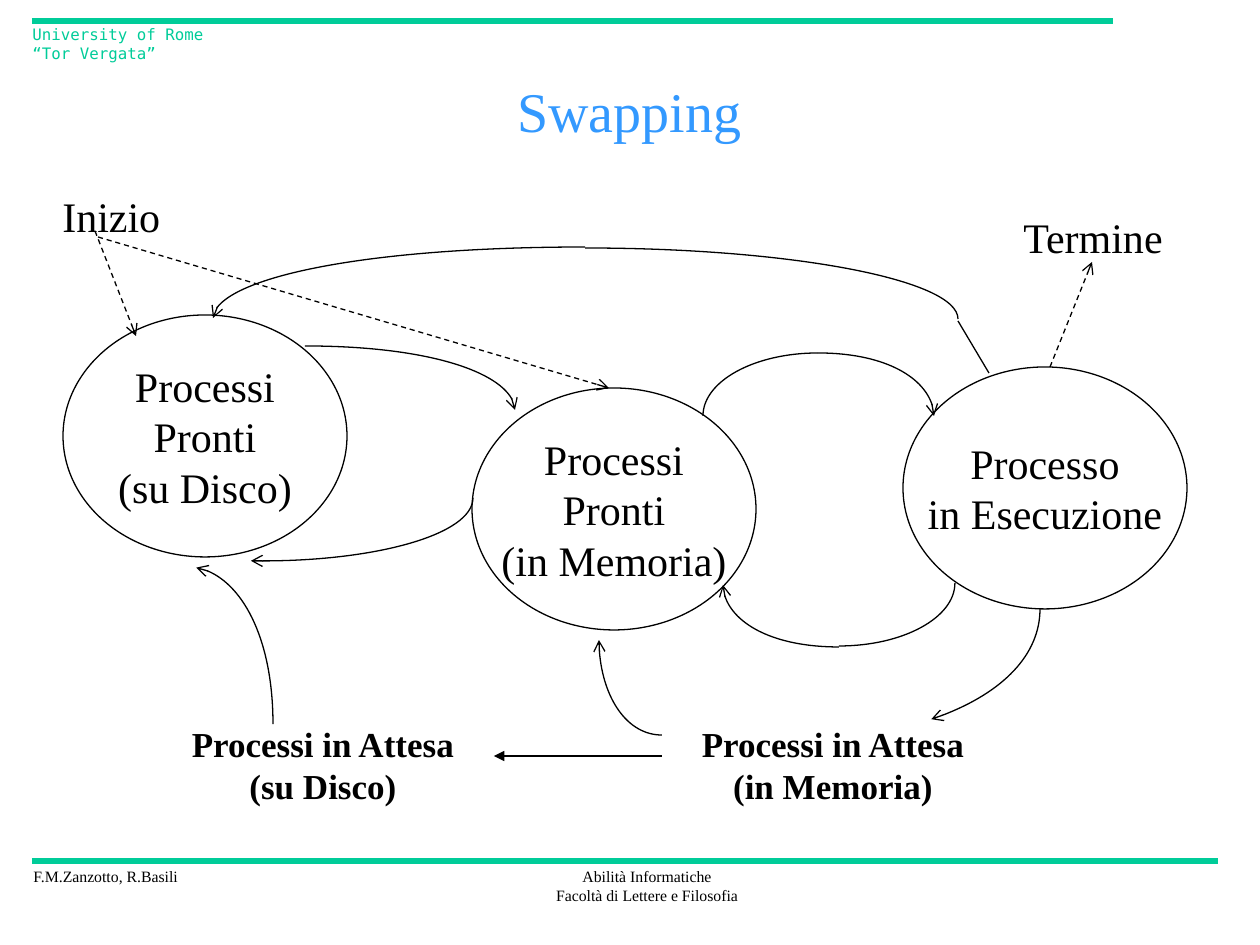
from math import cos, radians, sin, tan

from lxml import etree
from pptx import Presentation
from pptx.dml.color import RGBColor
from pptx.enum.dml import MSO_LINE
from pptx.enum.shapes import MSO_CONNECTOR, MSO_SHAPE
from pptx.enum.text import MSO_ANCHOR, MSO_AUTO_SIZE, PP_ALIGN
from pptx.oxml.ns import qn
from pptx.util import Emu, Pt

PX = 914400 / 126
BLACK = RGBColor(0x00, 0x00, 0x00)
GREEN = RGBColor(0x00, 0xCC, 0x99)
BLUE = RGBColor(0x33, 0x99, 0xFF)
SERIF = "Times New Roman"
MONO = "DejaVu Sans Mono"
LEFT, CENTER = PP_ALIGN.LEFT, PP_ALIGN.CENTER
MIDDLE = MSO_ANCHOR.MIDDLE
GROW = MSO_AUTO_SIZE.SHAPE_TO_FIT_TEXT
DASH = MSO_LINE.DASH
STRAIGHT = MSO_CONNECTOR.STRAIGHT
OVAL = MSO_SHAPE.OVAL


def emu(px):
    return Emu(round(px * PX))


def write(frame, text, size=24, color=BLACK, font=SERIF, bold=False,
          align=CENTER, anchor=None, wrap=False):
    frame.word_wrap = wrap
    if anchor is not None:
        frame.vertical_anchor = anchor
    frame.text = text
    for paragraph in frame.paragraphs:
        paragraph.alignment = align
        paragraph.font.size = Pt(size)
        paragraph.font.name = font
        paragraph.font.bold = bold
        paragraph.font.color.rgb = color


def arc_points(level, upright, first_angle):
    x, y = level
    width, height = upright[0] - x, upright[1] - y
    first = radians(first_angle)
    last = radians(90)
    reach = 4 / 3 * tan((last - first) / 4)

    def point(angle, pull):
        across = sin(angle) + pull * cos(angle)
        down = 1 - cos(angle) + pull * sin(angle)
        return emu(x + width * across), emu(y + height * down)

    return [point(first, 0), point(first, reach), point(last, -reach), point(last, 0)]


class Diagram:
    def __init__(self, slide, color=BLACK, width=0.75):
        self.shapes = slide.shapes
        self.color = color
        self.width = width

    def outline(self, shape, color=None, width=None, dash=None,
                end="tailEnd", arrow=None):
        shape.line.color.rgb = color or self.color
        shape.line.width = Pt(width or self.width)
        if dash is not None:
            shape.line.dash_style = dash
        if arrow:
            etree.SubElement(shape.get_or_add_ln(), qn(f"a:{end}"), type=arrow)

    def text(self, box, text, grow=True, **style):
        label = self.shapes.add_textbox(*map(emu, box))
        write(label.text_frame, text, **style)
        if grow:
            label.text_frame.auto_size = GROW

    def state(self, left, top, text):
        oval = self.shapes.add_shape(OVAL, *map(emu, (left, top, 284, 242)))
        oval.shadow.inherit = False
        oval.fill.background()
        self.outline(oval)
        write(oval.text_frame, text, anchor=MIDDLE)

    def line(self, start, end, **style):
        connector = self.shapes.add_connector(STRAIGHT, *map(emu, start + end))
        self.outline(connector, **style)
        etree.SubElement(connector._element.spPr, qn("a:effectLst"))

    def arc(self, level, upright, first_angle=0, **style):
        start, *controls = arc_points(level, upright, first_angle)
        builder = self.shapes.build_freeform(*start)
        builder.add_line_segments(controls, close=False)
        curve = builder.convert_to_shape()
        outline = next(curve._element.iter(qn("a:path")))
        bezier = etree.SubElement(outline, qn("a:cubicBezTo"))
        for segment in outline.findall(qn("a:lnTo")):
            bezier.append(segment[0])
            outline.remove(segment)
        curve.shadow.inherit = False
        curve.fill.background()
        self.outline(curve, **style)


def main():
    deck = Presentation()
    deck.slide_width, deck.slide_height = emu(1260), emu(945)
    diagram = Diagram(deck.slides.add_slide(deck.slide_layouts[6]))

    for y, right in ((861, 1218), (21, 1113)):
        diagram.line((32, y), (right, y), color=GREEN, width=3)
    diagram.text((21, 861, 171, 32), "F.M.Zanzotto, R.Basili", size=9, align=LEFT)
    diagram.text((543, 861, 208, 50),
                 "Abilità Informatiche\nFacoltà di Lettere e Filosofia", size=9)
    diagram.text((20, 19, 215, 50), "University of Rome “Tor Vergata”",
                 size=9, color=GREEN, font=MONO, align=LEFT, wrap=True)
    diagram.text((94, 63, 1071, 95), "Swapping", grow=False, size=32,
                 color=BLUE, anchor=MIDDLE, wrap=True)

    diagram.state(472, 388, "Processi\nPronti\n(in Memoria)")
    diagram.state(903, 367, "Processo\nin Esecuzione")
    diagram.state(63, 315, "Processi\nPronti\n(su Disco)")

    diagram.arc((305, 346), (515, 410), arrow="arrow")
    diagram.arc((829, 735), (1040, 609), 29, arrow="arrow", end="headEnd")
    diagram.arc((262, 561), (473, 498), -3, arrow="arrow", end="headEnd")

    for left, place in ((688, "in Memoria"), (178, "su Disco")):
        diagram.text((left, 716, 290, 97), f"Processi in Attesa\n({place})",
                     size=20, bold=True)

    diagram.arc((189, 567), (273, 724), 5, arrow="arrow", end="headEnd")
    diagram.line((662, 756), (494, 756), arrow="triangle")
    for level, upright, arrow in (
        ((662, 735), (599, 640), "arrow"),
        ((818, 353), (703, 416), None),
        ((818, 353), (934, 416), "arrow"),
        ((839, 647), (723, 585), "arrow"),
        ((839, 646), (955, 583), None),
        ((585, 247), (213, 318), "arrow"),
        ((585, 248), (958, 319), None),
    ):
        diagram.arc(level, upright, arrow=arrow)
    diagram.line((958, 321), (989, 373))

    diagram.text((50, 184, 123, 63), "Inizio", align=LEFT)
    diagram.text((1011, 205, 168, 63), "Termine", align=LEFT)
    for start, end in (
        ((95, 231), (136, 336)),
        ((1050, 367), (1092, 262)),
        ((98, 237), (609, 388)),
    ):
        diagram.line(start, end, dash=DASH, arrow="arrow")

    deck.save("out.pptx")


if __name__ == "__main__":
    main()
